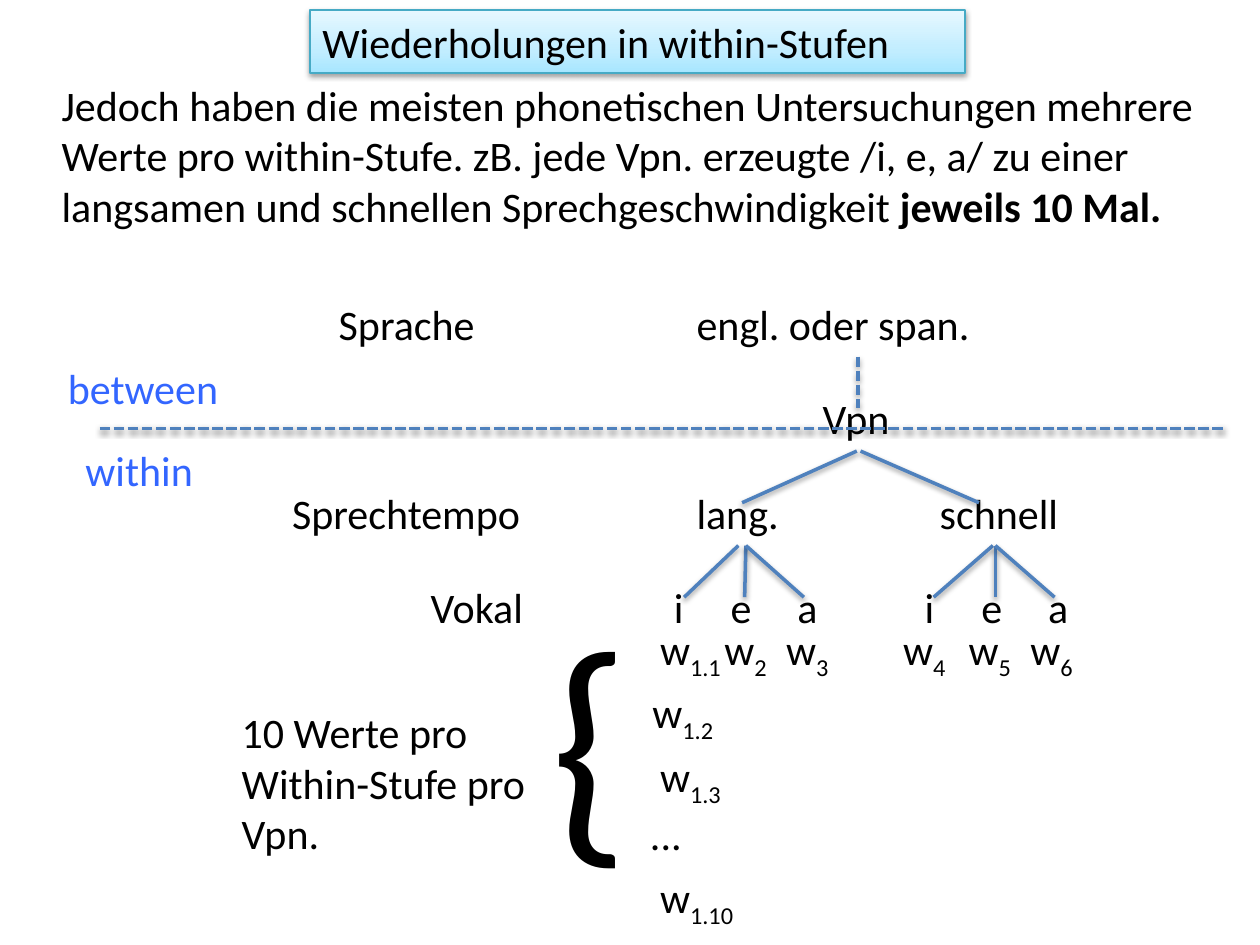
from lxml import etree
from pptx import Presentation
from pptx.dml.color import RGBColor
from pptx.enum import dml, shapes, text
from pptx.oxml import parse_xml
from pptx.oxml.ns import nsdecls
from pptx.util import Inches, Pt

BLACK, BLUE, LINE = "000000", "3366FF", "4F81BD"


def rgb(value):
    return RGBColor.from_string(value)


def add_shadow(sp):
    """Soft shadow falling straight down; call after the line is set."""
    sp._element.spPr.append(parse_xml(
        f'<a:effectLst {nsdecls("a")}>'
        '<a:outerShdw blurRad="40000" dist="20000" dir="5400000" rotWithShape="0">'
        '<a:srgbClr val="000000"><a:alpha val="38000"/></a:srgbClr>'
        '</a:outerShdw></a:effectLst>'))


def write(sp, content, wrap=False, size=24, color=BLACK):
    tf = sp.text_frame
    tf.word_wrap = wrap
    tf.auto_size = text.MSO_AUTO_SIZE.SHAPE_TO_FIT_TEXT
    p = tf.paragraphs[0]
    p.alignment = text.PP_ALIGN.LEFT
    p.font.name, p.font.size = "Calibri", Pt(size)
    p.font.color.rgb = rgb(color)
    p.add_run().text = content
    return p


def add_text(slide, content, x, y, w, h=0.5, **style):
    sp = slide.shapes.add_textbox(Inches(x), Inches(y), Inches(w), Inches(h))
    return write(sp, content, **style)


def add_value(slide, index, x, y, w):
    """A measured value: w with a subscript index."""
    r = add_text(slide, "w", x, y, w).add_run()
    r.text = index
    r.font._element.set("baseline", "-25000")


def add_line(slide, x1, y1, x2, y2, dashed=False):
    line = slide.shapes.add_connector(
        shapes.MSO_CONNECTOR.STRAIGHT,
        Inches(x1), Inches(y1), Inches(x2), Inches(y2))
    line.line.color.rgb = rgb(LINE)
    line.line.width = Pt(2)
    if dashed:
        line.line.dash_style = dml.MSO_LINE.SQUARE_DOT
    add_shadow(line)


def add_title(slide, content):
    sp = slide.shapes.add_shape(shapes.MSO_SHAPE.RECTANGLE, Inches(2.46),
                                Inches(0.08), Inches(5.2), Inches(0.5))
    sp.fill.gradient()
    sp.fill.gradient_angle = 90
    stops = sp._element.spPr.find(".//{*}gsLst")
    for stop in list(stops):
        stops.remove(stop)
    for pos, color in ((0, "A7E6FF"), (35, "C1EDFF"), (100, "E7F8FF")):
        stops.append(parse_xml(
            f'<a:gs {nsdecls("a")} pos="{pos * 1000}"><a:srgbClr val="{color}"/></a:gs>'))
    sp.line.color.rgb = rgb("46AAC5")
    sp.line.width = Pt(0.75)
    add_shadow(sp)
    write(sp, content, wrap=True)


def add_vowel_branch(slide, x, top, ends):
    """Three vowels below a tempo, with the lines leading to them."""
    for vowel, dx, w in (("i", 0, 0.28), ("e", 0.45, 0.37), ("a", 0.98, 0.36)):
        add_text(slide, vowel, x + dx, 4.57, w)
    for start, end in zip(top, ends):
        add_line(slide, start, 4.33, end, 4.74)


def main():
    prs = Presentation()
    prs.slide_width, prs.slide_height = Inches(10), Inches(7.5)
    slide = prs.slides.add_slide(prs.slide_layouts[6])

    # Introduction
    p = add_text(slide, "Jedoch haben die meisten phonetischen Untersuchungen mehrere "
                 "Werte pro within-Stufe. zB. jede Vpn. erzeugte /i, e, a/ zu einer "
                 "langsamen und schnellen Sprechgeschwindigkeit ",
                 0.39, 0.58, 9.19, 1.72, wrap=True)
    r = p.add_run()
    r.text = "jeweils 10 Mal."
    r.font.bold = True

    # Factor names and upper levels of the tree
    for label, x, y, w in (("Sprache", 2.59, 2.32, 1.3),
                           ("Sprechtempo", 2.22, 3.82, 2.04),
                           ("Vokal", 3.32, 4.57, 0.96),
                           ("Vpn", 6.43, 3.07, 0.75),
                           ("lang.", 5.43, 3.82, 0.86),
                           ("schnell", 7.36, 3.82, 1.15)):
        add_text(slide, label, x, y, w)
    add_text(slide, "engl. oder span.", 5.43, 2.32, 2.79, wrap=True)

    # Branches
    add_vowel_branch(slide, 5.25, (5.86, 5.92, 5.92), (5.43, 5.91, 6.38))
    add_vowel_branch(slide, 7.24, (7.88, 7.9, 7.9), (7.41, 7.9, 8.37))
    add_line(slide, 5.89, 3.99, 6.8, 3.58)
    add_line(slide, 7.77, 3.99, 6.83, 3.58)
    add_line(slide, 6.81, 2.83, 6.81, 3.24, dashed=True)

    # Values: one per cell, then the repetitions of the first cell
    add_value(slide, "1.1", 5.14, 4.9, 0.73)
    for index, x in enumerate((5.65, 6.14, 7.07, 7.59, 8.08), start=2):
        add_value(slide, str(index), x, 4.9, 0.56)
    for index, x, y, w in (("1.2", 5.08, 5.4, 0.73), ("1.3", 5.14, 5.91, 0.73),
                           ("1.10", 5.14, 6.87, 0.84)):
        add_value(slide, index, x, y, w)
    add_text(slide, "...", 5.06, 6.37, 0.59, wrap=True)

    # Border between the two factor types
    add_text(slide, "between", 0.44, 2.83, 1.41, color=BLUE)
    add_text(slide, "within", 0.58, 3.48, 1.08, color=BLUE)
    add_line(slide, 0.79, 3.4, 9.71, 3.4, dashed=True)

    # Bracketed remark
    add_text(slide, "10 Werte pro Within-Stufe pro Vpn.", 1.82, 5.56, 2.53, 1.31, wrap=True)
    add_text(slide, "{", 4.27, 4.57, 0.84, 2.52, size=144)

    add_title(slide, "Wiederholungen in within-Stufen")
    prs.save("out.pptx")


if __name__ == "__main__":
    main()
